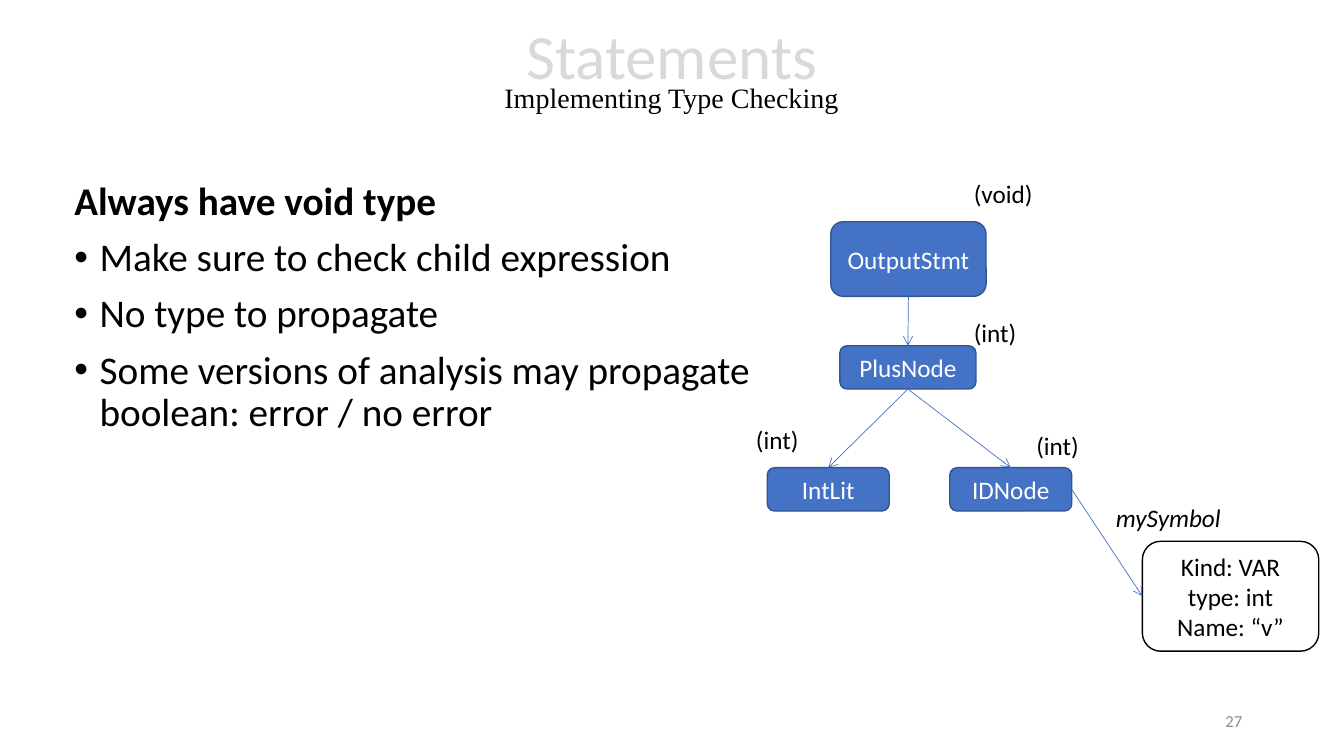
from lxml import etree
from pptx import Presentation
from pptx.dml.color import RGBColor
from pptx.enum.shapes import MSO_CONNECTOR, MSO_SHAPE
from pptx.enum.text import MSO_ANCHOR, MSO_AUTO_SIZE, PP_ALIGN
from pptx.oxml.ns import qn
from pptx.util import Pt

PX = 9144  # 100 px to the inch
CENTER, RIGHT = PP_ALIGN.CENTER, PP_ALIGN.RIGHT
MIDDLE = MSO_ANCHOR.MIDDLE
FIT = MSO_AUTO_SIZE.SHAPE_TO_FIT_TEXT
ROUND, LINE = MSO_SHAPE.ROUNDED_RECTANGLE, MSO_CONNECTOR.STRAIGHT
BLACK, WHITE, BLUE, NAVY = "000000", "FFFFFF", "4472C4", "325491"


def style(font, size, color, name="Calibri"):
    font.size, font.name = Pt(size), name
    font.color.rgb = RGBColor.from_string(color)


def add_box(left, top, width, height):
    """Add a wrapping text box and return its text frame."""
    box = slide.shapes.add_textbox(left * PX, top * PX, width * PX, height * PX)
    box.text_frame.word_wrap = True
    return box.text_frame


deck = Presentation()
deck.slide_width, deck.slide_height = 1333 * PX, 750 * PX
slide = deck.slides.add_slide(deck.slide_layouts[6])

# Title
frame = add_box(235, 2, 862, 145)
frame.vertical_anchor = MIDDLE
para = frame.paragraphs[0]
para.alignment, para.line_spacing = CENTER, 0.7
run = para.add_run()
run.text = "Statements"
style(run.font, 45, "D9D9D9")
para.add_line_break()
run = para.add_run()
run.text = "Implementing Type Checking"
style(run.font, 20, BLACK, "Times New Roman")

# Body
frame = add_box(64, 175, 704, 495)
frame.text = "\n".join([
    "Always have void type",
    "Make sure to check child expression",
    "No type to propagate",
    "Some versions of analysis may propagate boolean: error / no error",
])
for i, para in enumerate(frame.paragraphs):
    style(para.font, 28, BLACK)
    para.font.bold = i == 0
    para.line_spacing, para.space_before = 0.9, Pt(10)
    if i:
        props = para._p.get_or_add_pPr()
        props.set("marL", str(25 * PX))
        props.set("indent", str(-25 * PX))
        font = etree.Element(qn("a:buFont"), typeface="Arial")
        mark = etree.Element(qn("a:buChar"), char="•")
        props.find(qn("a:defRPr")).addprevious(font)
        font.addnext(mark)

# Slide number
frame = add_box(942, 695, 300, 40)
frame.vertical_anchor = MIDDLE
frame.text = "27"
para = frame.paragraphs[0]
para.alignment = RIGHT
style(para.font, 12, "8C8C8C")

# Tree nodes: text, left, top, width, height, fill, line, text colour
tree = (BLUE, NAVY, WHITE)
nodes = [
    ("OutputStmt", 824, 220, 154, 74, *tree),
    ("PlusNode", 833, 343, 135, 43, *tree),
    ("IntLit", 761, 464, 121, 43, *tree),
    ("IDNode", 942, 464, 121, 43, *tree),
    ("Kind: VAR\ntype: int\nName: “v”", 1133, 537, 175, 109, WHITE, BLACK, BLACK),
]
shapes = []
for text, left, top, width, height, fill, edge, ink in nodes:
    node = slide.shapes.add_shape(ROUND, left * PX, top * PX, width * PX, height * PX)
    node.shadow.inherit = False
    node.fill.solid()
    node.fill.fore_color.rgb = RGBColor.from_string(fill)
    node.line.color.rgb = RGBColor.from_string(edge)
    node.line.width = Pt(1)
    frame = node.text_frame
    frame.word_wrap, frame.vertical_anchor = True, MIDDLE
    frame.text = text
    for para in frame.paragraphs:
        para.alignment = CENTER
        style(para.font, 18, ink)
    shapes.append(node)

# Arrows: from node, its side, to node, its side (0 top, 1 left, 2 bottom, 3 right)
output, plus, lit, ident, symbol = shapes
for start, out, end, into in [
    (output, 2, plus, 0),
    (plus, 2, lit, 0),
    (plus, 2, ident, 0),
    (ident, 3, symbol, 1),
]:
    arrow = slide.shapes.add_connector(LINE, 0, 0, 0, 0)
    arrow.begin_connect(start, out)
    arrow.end_connect(end, into)
    arrow.line.color.rgb = RGBColor.from_string(BLUE)
    arrow.line.width = Pt(0.5)
    etree.SubElement(arrow.line._get_or_add_ln(), qn("a:tailEnd"), type="arrow")
    etree.SubElement(arrow._element.spPr, qn("a:effectLst"))

# Type labels
for text, left, top, width in [
    ("(void)", 956, 172, 79),
    ("(int)", 956, 310, 63),
    ("(int)", 740, 416, 63),
    ("(int)", 1018, 422, 63),
    ("mySymbol", 1097, 493, 125),
]:
    frame = add_box(left, top, width, 40)
    frame.word_wrap, frame.auto_size = False, FIT
    frame.text = text
    font = frame.paragraphs[0].font
    style(font, 18, BLACK)
    font.italic = text == "mySymbol"

deck.save("out.pptx")
